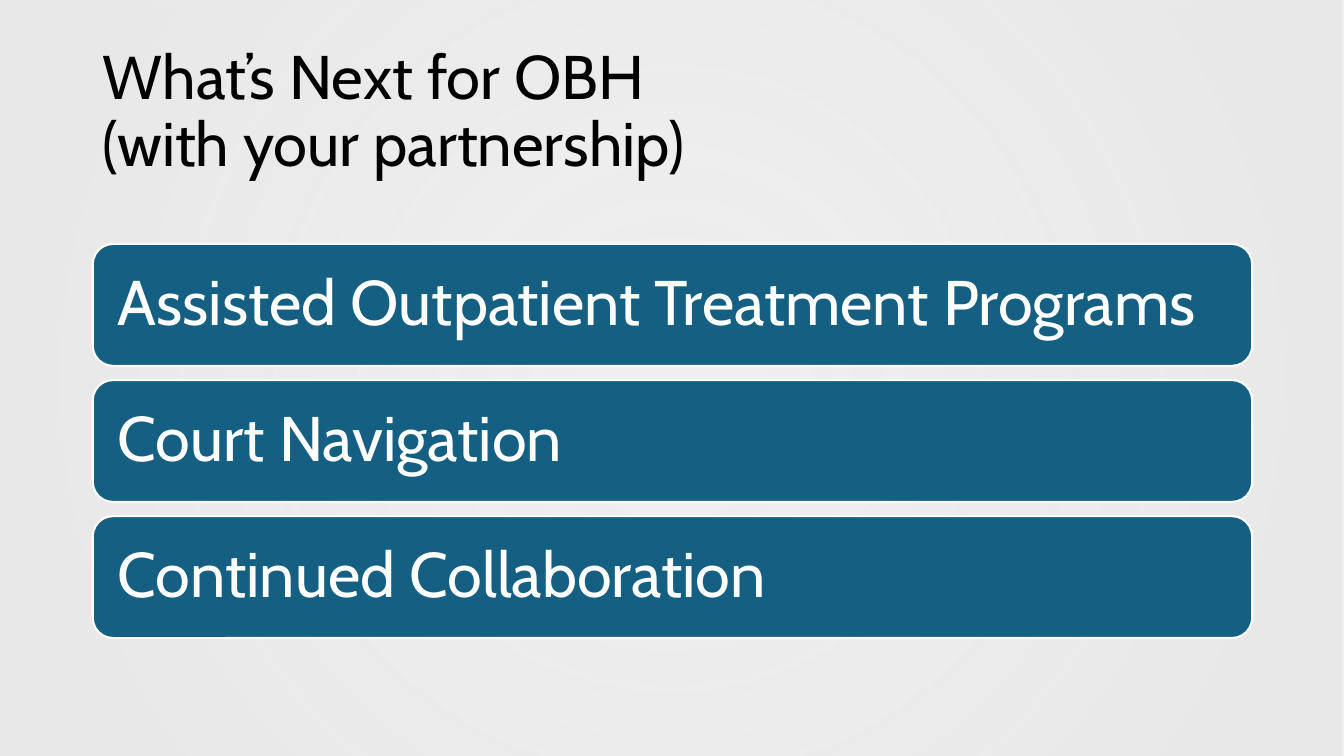
import pptx
import pptx.dml.color
import pptx.enum.shapes
import pptx.enum.text
import pptx.oxml
import pptx.oxml.ns
import pptx.util
from lxml import etree


def rgb(value):
    return pptx.dml.color.RGBColor.from_string(value)


class Deck:
    font = "Cabin"
    ink, accent, white, gray = "000000", "156082", "FFFFFF", "E8E8E8"
    width, height = 13.33, 7.5
    left, column = 0.92, 11.5
    top, row, gap = 2.42, 1.35, 0.14
    inset = 0.19

    def __init__(self):
        self.prs = pptx.Presentation()
        self.prs.slide_width = pptx.util.Inches(self.width)
        self.prs.slide_height = pptx.util.Inches(self.height)
        self.s = self.prs.slides.add_slide(self.prs.slide_layouts[5])

    def cell(self, row, rows=1):
        box = (self.left, self.top + row * self.row,
               self.column, rows * self.row - self.gap)
        return [pptx.util.Inches(v) for v in box]

    def set_text(self, sp, text, size, color):
        tf = sp.text_frame
        tf.text = text
        tf.word_wrap = True
        tf.auto_size = pptx.enum.text.MSO_AUTO_SIZE.NONE
        tf.vertical_anchor = pptx.enum.text.MSO_ANCHOR.MIDDLE
        p = tf.paragraphs[0]
        p.alignment = pptx.enum.text.PP_ALIGN.LEFT
        p.line_spacing = 0.9
        p.font.name = self.font
        p.font.size = pptx.util.Pt(size)
        p.font.color.rgb = rgb(color)
        return tf

    def shape(self, kind, box):
        sp = self.s.shapes.add_shape(kind, *box)
        sp.shadow.inherit = False
        return sp

    def backdrop(self, stops):
        box = (0, 0, self.prs.slide_width, self.prs.slide_height)
        sp = self.shape(pptx.enum.shapes.MSO_SHAPE.RECTANGLE, box)
        sp.line.fill.background()
        sp.fill.gradient()
        qn = pptx.oxml.ns.qn
        for stop, (position, alpha) in zip(sp.fill.gradient_stops, stops):
            stop.position = position
            stop.color.rgb = rgb(self.gray)
        grad = sp._element.spPr.find(qn("a:gradFill"))
        for color, (position, alpha) in zip(grad.iter(qn("a:srgbClr")), stops):
            etree.SubElement(color, qn("a:alpha"), val=str(alpha * 1000))
        grad.remove(grad.find(qn("a:lin")))
        ring = etree.SubElement(grad, qn("a:path"), path="circle")
        etree.SubElement(ring, qn("a:fillToRect"),
                         {side: "50000" for side in "ltrb"})
        self.s.shapes._spTree.insert(2, sp._element)

    def title(self, text, row, rows):
        sp = self.s.shapes.title
        sp.left, sp.top, sp.width, sp.height = self.cell(row, rows)
        self.set_text(sp, text, 44, self.ink)

    def card(self, text, row):
        sp = self.shape(pptx.enum.shapes.MSO_SHAPE.ROUNDED_RECTANGLE,
                        self.cell(row))
        sp.fill.solid()
        sp.fill.fore_color.rgb = rgb(self.accent)
        sp.line.color.rgb = rgb(self.white)
        sp.line.width = pptx.util.Pt(1.5)
        tf = self.set_text(sp, text, 45, self.white)
        tf.margin_left = tf.margin_right = pptx.util.Inches(self.inset)
        tf.margin_top = tf.margin_bottom = pptx.util.Inches(self.inset)


def main():
    deck = Deck()
    deck.backdrop([(0.1, 68), (0.85, 97)])
    deck.title("What’s Next for OBH\v(with your partnership)", -1.5, 1.18)
    programs = ["Assisted Outpatient Treatment Programs",
                "Court Navigation",
                "Continued Collaboration"]
    for row, program in enumerate(programs):
        deck.card(program, row)
    deck.prs.save("out.pptx")


if __name__ == "__main__":
    main()
